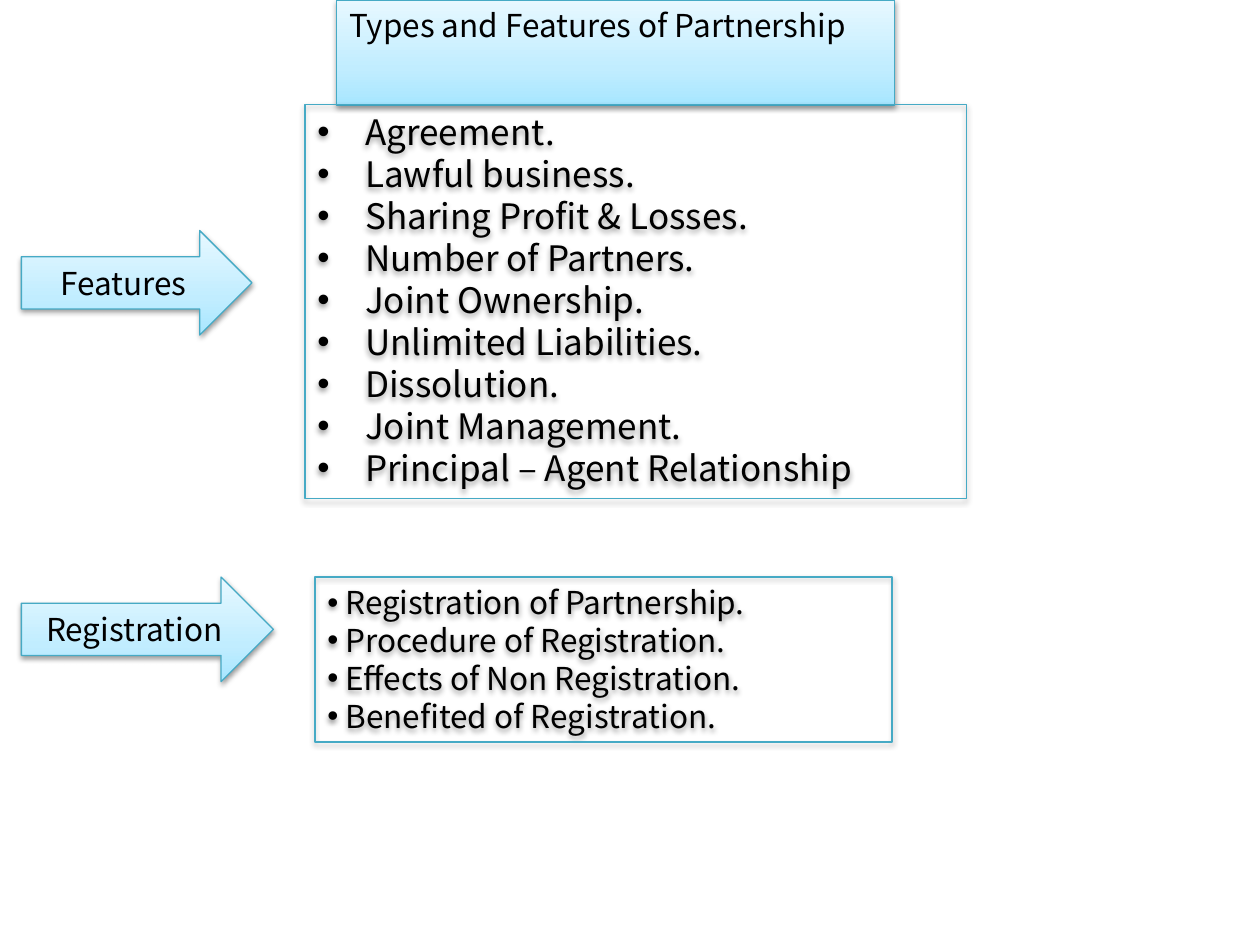
from lxml import etree
from pptx import Presentation
from pptx.dml.color import RGBColor
from pptx.enum.shapes import MSO_SHAPE as SHAPE
from pptx.enum.text import MSO_ANCHOR as ANCHOR, MSO_AUTO_SIZE as AUTO, PP_ALIGN as ALIGN
from pptx.oxml import parse_xml
from pptx.oxml.ns import nsdecls, qn
from pptx.util import Inches, Pt

FONT = "Noto Sans CJK KR"
BLACK = RGBColor(0x00, 0x00, 0x00)
TEAL = RGBColor(0x46, 0xAA, 0xC5)
SKY = RGBColor(0xA7, 0xE6, 0xFF)
PALE = RGBColor(0xC1, 0xED, 0xFF)
ICE = RGBColor(0xE7, 0xF8, 0xFF)


def style_shape(sp, filled):
    """Give a teal outline, a soft shadow and, if filled, the blue gradient."""
    if filled:
        sp.fill.solid()
        stops = "".join(
            f'<a:gs pos="{pos * 1000}"><a:srgbClr val="{color}"/></a:gs>'
            for pos, color in ((0, SKY), (35, PALE), (100, ICE)))
        solid = sp._element.spPr.find(qn("a:solidFill"))
        solid.getparent().replace(solid, parse_xml(
            f'<a:gradFill {nsdecls("a")} rotWithShape="1"><a:gsLst>{stops}</a:gsLst>'
            '<a:lin ang="16200000" scaled="1"/></a:gradFill>'))
    else:
        sp.fill.background()
    sp.line.color.rgb = TEAL
    sp.line.width = Pt(0.75)
    sp.shadow.inherit = False
    effects = sp._element.spPr.find(qn("a:effectLst"))
    effects.append(parse_xml(
        f'<a:outerShdw {nsdecls("a")} blurRad="{Pt(3.1)}" dist="{Pt(1.6)}" '
        'dir="5400000" rotWithShape="0"><a:srgbClr val="000000">'
        '<a:alpha val="38000"/></a:srgbClr></a:outerShdw>'))


def add_text(p, text, size, align=ALIGN.LEFT):
    p.alignment = align
    r = p.add_run()
    r.text = text
    r.font.name = FONT
    r.font.size = Pt(size)
    r.font.color.rgb = BLACK


prs = Presentation()
prs.slide_width, prs.slide_height = Inches(10), Inches(7.5)
s = prs.slides.add_slide(prs.slide_layouts[5])

# Title
title = s.shapes.title
title.left, title.top = Inches(2.67), Inches(0)
title.width, title.height = Inches(4.43), Inches(0.4)
style_shape(title, True)
tf = title.text_frame
tf.word_wrap = True
tf.auto_size = AUTO.SHAPE_TO_FIT_TEXT
tf.vertical_anchor = ANCHOR.TOP
add_text(tf.paragraphs[0], "Types and Features of Partnership", 18)

# Arrow labels
for label, top, width in (("Features", 1.83, 1.83), ("Registration", 4.58, 2)):
    arrow = s.shapes.add_shape(SHAPE.RIGHT_ARROW, Inches(0.17), Inches(top),
                               Inches(width), Inches(0.83))
    style_shape(arrow, True)
    tf = arrow.text_frame
    tf.vertical_anchor = ANCHOR.MIDDLE
    add_text(tf.paragraphs[0], label, 18, ALIGN.CENTER)

# Bulleted boxes: position, text size, hanging indent, items
lists = (
    ((2.42, 0.83, 5.25, 3.13), 20, 0.38, (
        "Agreement.", "Lawful business.", "Sharing Profit & Losses.",
        "Number of Partners.", "Joint Ownership.", "Unlimited Liabilities.",
        "Dissolution.", "Joint Management.", "Principal – Agent Relationship")),
    ((2.5, 4.58, 4.58, 1.31), 18, 0, (
        " Registration of Partnership.", " Procedure of Registration.",
        " Effects of Non Registration.", " Benefited of Registration.")),
)
for box, size, indent, items in lists:
    sp = s.shapes.add_shape(SHAPE.RECTANGLE, *(Inches(v) for v in box))
    style_shape(sp, False)
    tf = sp.text_frame
    tf.word_wrap = True
    tf.auto_size = AUTO.SHAPE_TO_FIT_TEXT
    tf.vertical_anchor = ANCHOR.TOP
    for i, item in enumerate(items):
        p = tf.add_paragraph() if i else tf.paragraphs[0]
        pPr = p._p.get_or_add_pPr()
        pPr.set("marL", str(Inches(indent)))
        pPr.set("indent", str(-Inches(indent)))
        etree.SubElement(pPr, qn("a:buFont")).set("typeface", "Arial")
        etree.SubElement(pPr, qn("a:buChar")).set("char", "•")
        add_text(p, item, size)

prs.save("out.pptx")
